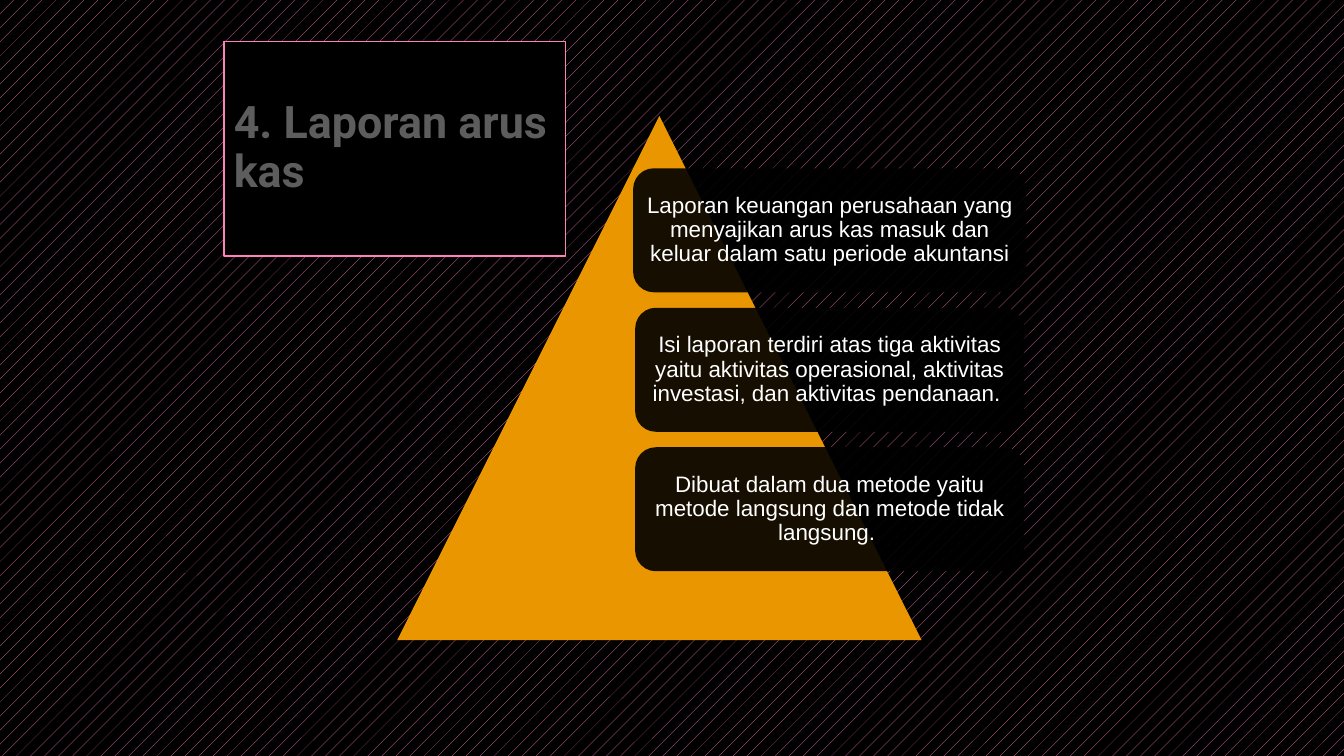
"""Builds the cash flow statement slide: a title box and a pyramid with three points."""
from pptx import Presentation
from pptx.dml.color import RGBColor
from pptx.enum.dml import MSO_PATTERN
from pptx.enum.shapes import MSO_SHAPE
from pptx.enum.text import MSO_ANCHOR, PP_ALIGN
from pptx.oxml.ns import qn
from pptx.util import Inches, Pt
from lxml import etree

TITLE = "4. Laporan arus kas"
POINTS = [
    ("Laporan keuangan perusahaan yang menyajikan arus kas masuk dan "
     "keluar dalam satu periode akuntansi", 3.9),
    ("Isi laporan terdiri atas tiga aktivitas yaitu aktivitas operasional, "
     "aktivitas investasi, dan aktivitas pendanaan. ", 3.86),
    ("Dibuat dalam dua metode yaitu metode langsung dan metode tidak "
     "langsung. ", 3.86),
]

BLACK = RGBColor(0x00, 0x00, 0x00)
WHITE = RGBColor(0xFF, 0xFF, 0xFF)
PINK = RGBColor(0xFF, 0x80, 0xBD)
ORANGE = RGBColor(0xEA, 0x96, 0x00)
GREY = RGBColor(0x5D, 0x5D, 0x5D)

RECTANGLE = MSO_SHAPE.RECTANGLE
ROUNDED = MSO_SHAPE.ROUNDED_RECTANGLE
TRIANGLE = MSO_SHAPE.ISOSCELES_TRIANGLE
MIDDLE = MSO_ANCHOR.MIDDLE
LEFT, CENTER = PP_ALIGN.LEFT, PP_ALIGN.CENTER

SLIDE_WIDTH, SLIDE_HEIGHT = 13.33, 7.5
PYRAMID_LEFT, PYRAMID_TOP, PYRAMID_SIZE = 3.94, 1.15, 5.2
POINT_CENTER = PYRAMID_LEFT + PYRAMID_SIZE * 0.825
POINT_TOP = PYRAMID_TOP + PYRAMID_SIZE * 0.1
POINT_HEIGHT = 1.23
POINT_PITCH = POINT_HEIGHT * 1.125
POINT_INSET = 0.07


def add_block(slide, kind, left, top, width, height, color):
    block = slide.shapes.add_shape(
        kind, Inches(left), Inches(top), Inches(width), Inches(height))
    block.shadow.inherit = False
    block.fill.solid()
    block.fill.fore_color.rgb = color
    block.line.fill.background()
    return block


def write(block, text, font_name, size, color, align, bold=False):
    frame = block.text_frame
    frame.word_wrap = True
    frame.vertical_anchor = MIDDLE
    frame.text = text
    paragraph = frame.paragraphs[0]
    paragraph.alignment = align
    paragraph.line_spacing = 0.9
    font = paragraph.runs[0].font
    font.name, font.size, font.bold = font_name, Pt(size), bold
    font.color.rgb = color


def add_point(slide, row, text, width):
    point = add_block(slide, ROUNDED, POINT_CENTER - width / 2,
                      POINT_TOP + row * POINT_PITCH, width, POINT_HEIGHT, BLACK)
    fill_color = point.fill._xPr.find(qn("a:solidFill"))[0]
    etree.SubElement(fill_color, qn("a:alpha")).set("val", "90000")
    frame = point.text_frame
    frame.margin_left = frame.margin_right = Inches(POINT_INSET)
    frame.margin_top = frame.margin_bottom = Inches(POINT_INSET)
    write(point, text, "Arial", 16, WHITE, CENTER)


def main():
    deck = Presentation()
    deck.slide_width, deck.slide_height = Inches(SLIDE_WIDTH), Inches(SLIDE_HEIGHT)
    slide = deck.slides.add_slide(deck.slide_layouts[6])

    backdrop = slide.background.fill
    backdrop.patterned()
    backdrop.pattern = MSO_PATTERN.PERCENT_5
    backdrop.fore_color.rgb = PINK
    backdrop.back_color.rgb = BLACK

    heading = add_block(slide, RECTANGLE, 2.22, 0.41, 3.39, 2.13, BLACK)
    heading.line.color.rgb = PINK
    heading.line.width = Pt(1)
    write(heading, TITLE, "Roboto", 32, GREY, LEFT, bold=True)

    add_block(slide, TRIANGLE, PYRAMID_LEFT, PYRAMID_TOP,
              PYRAMID_SIZE, PYRAMID_SIZE, ORANGE)
    for row, (text, width) in enumerate(POINTS):
        add_point(slide, row, text, width)

    deck.save("out.pptx")


if __name__ == "__main__":
    main()
